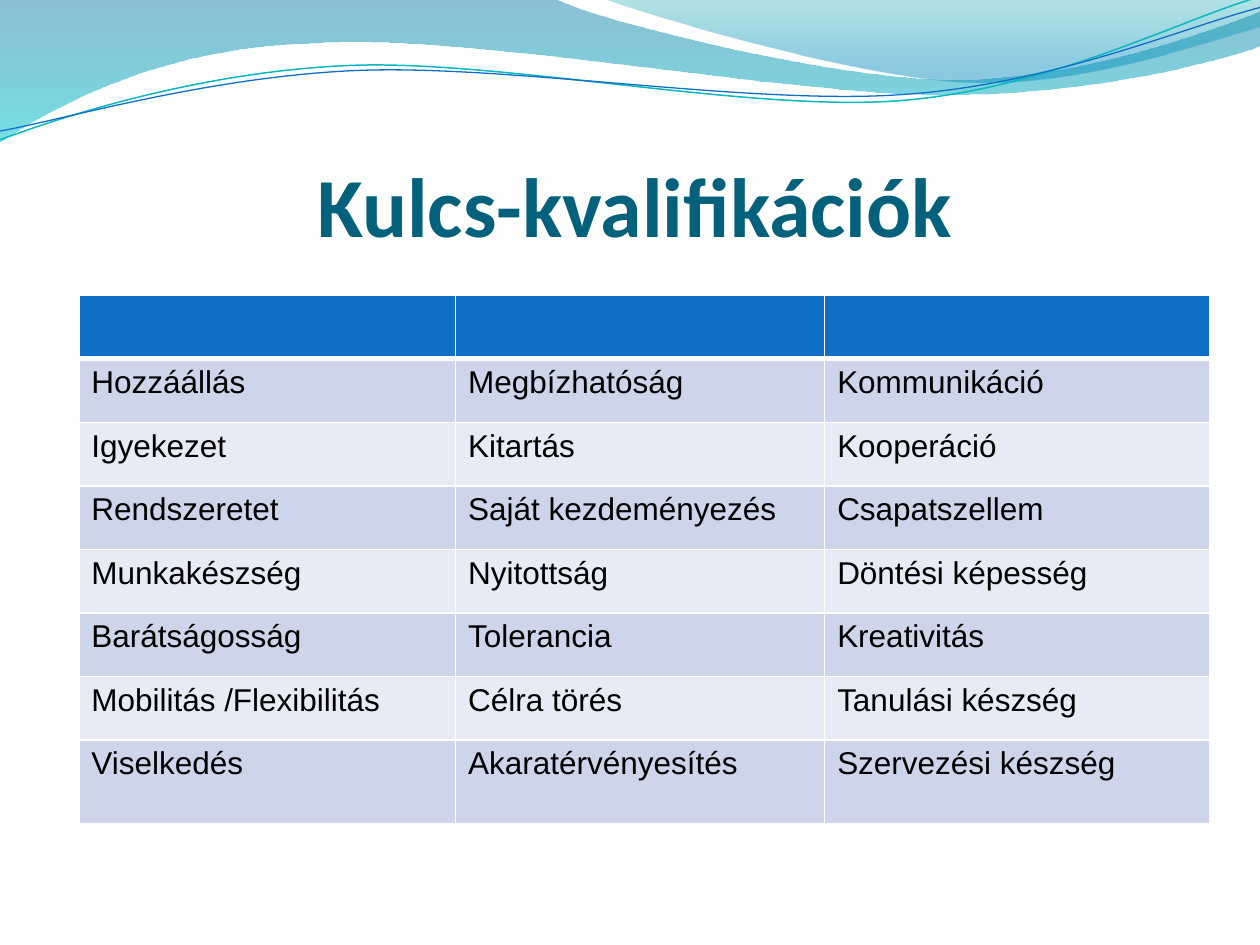
import math

import pptx
import pptx.util
import pptx.dml.color
import pptx.enum.text
import pptx.oxml
import pptx.oxml.ns
from lxml import etree

# Content
TITLE = "Kulcs-kvalifikációk"
ROWS = [
    ("", "", ""),
    ("Hozzáállás", "Megbízhatóság", "Kommunikáció"),
    ("Igyekezet", "Kitartás", "Kooperáció"),
    ("Rendszeretet", "Saját kezdeményezés", "Csapatszellem"),
    ("Munkakészség", "Nyitottság", "Döntési képesség"),
    ("Barátságosság", "Tolerancia", "Kreativitás"),
    ("Mobilitás /Flexibilitás", "Célra törés", "Tanulási készség"),
    ("Viselkedés", "Akaratérvényesítés", "Szervezési készség"),
]
COLORS = {
    "title": "04617B", "text": "000000", "border": "FFFFFF",
    "header": "0F6FC6", "odd": "CCD5EA", "even": "E7EBF5",
    "deep": "0074A1", "aqua": "00C6CF", "teal": "00A1A9",
    "sky": "008BBF", "line_teal": "0AB8BF", "line_blue": "0F6FC6",
}

# Wave outlines in inches: a pair is a straight step, six numbers a curve.
# Gradient stops: position, colour, opacity in percent.
BANDS = [
    ([(0, 0), (4.4, -0.01), (4.76, 0.17, 6.64, 0.63, 7.58, 0.63),
      (8.53, 0.63, 9.58, 0.26, 10, 0.09), (10.01, 0.36),
      (9.83, 0.44, 8.7, 0.76, 7.46, 0.75), (6.22, 0.75, 3.82, 0.28, 2.57, 0.34),
      (1.29, 0.36, 0.46, 0.83, -0.01, 1.13), (0, 0)],
     [(0, "deep", 45), (1, "aqua", 55)]),
    ([(4.79, -0.01), (5.09, 0.11, 6.82, 0.62, 7.69, 0.65),
      (8.56, 0.69, 9.61, 0.32, 10, 0.21), (10, 0), (4.79, -0.01)],
     [(0, "teal", 30), (0.8, "sky", 45)]),
]
# Lines: outline, centre of rotation, colour, width in points
LINES = [
    ([(0, 1.11), (0.48, 0.93, 1.58, 0.57, 2.77, 0.52),
      (3.95, 0.47, 5.93, 0.89, 7.13, 0.8), (8.33, 0.71, 9.38, 0.15, 9.98, -0.02)],
     (4.99, 0.57), "line_teal", 0.85),
    ([(0, 1.04), (0.47, 0.96, 1.64, 0.61, 2.83, 0.56),
      (4.03, 0.51, 5.97, 0.84, 7.17, 0.75), (8.36, 0.67, 9.41, 0.21, 10, 0.06)],
     (5, 0.59), "line_blue", 0.75),
]
LINE_TILT = 357.3

# Table grid
WIDTH, HEIGHT = 10, 7.5
LEFT, TOP = WIDTH / 16, HEIGHT * 5 / 16
COL_WIDTHS = (2.99, 2.93, 3.06)
ROW_HEIGHT = 3.53 / 7
LAST_HEIGHT = 0.67

inch = pptx.util.Inches
qn = pptx.oxml.ns.qn


def rgb(name):
    return pptx.dml.color.RGBColor.from_string(COLORS[name])


def write(tf, text, size, font, color, bold=False, align=None):
    p = tf.paragraphs[0]
    p.alignment = align
    r = p.add_run()
    r.text = text
    r.font.size = pptx.util.Pt(size)
    r.font.name = font
    r.font.bold = bold
    r.font.color.rgb = rgb(color)


def turn(step, centre, degrees):
    """Rotate every point of a step clockwise about the centre."""
    cos, sin = math.cos(math.radians(degrees)), math.sin(math.radians(degrees))
    turned = []
    for x, y in zip(step[::2], step[1::2]):
        dx, dy = x - centre[0], y - centre[1]
        turned += [centre[0] + dx * cos - dy * sin, centre[1] + dx * sin + dy * cos]
    return tuple(turned)


def add_wave(slide, steps, closed):
    """Build the outline through its end points, then bend the curved steps."""
    anchors = [(inch(step[-2]), inch(step[-1])) for step in steps]
    fb = slide.shapes.build_freeform(*anchors[0])
    fb.add_line_segments(anchors[1:], close=closed)
    sp = fb.convert_to_shape()
    sp.shadow.inherit = False
    segments = list(sp._element.iter(qn("a:lnTo")))
    for segment, step in zip(segments, steps[1:]):
        if len(step) == 6:
            curve = etree.Element(qn("a:cubicBezTo"))
            for x, y in zip(step[::2], step[1::2]):
                etree.SubElement(curve, qn("a:pt"), x=str(inch(x) - sp.left),
                                 y=str(inch(y) - sp.top))
            segment.getparent().replace(segment, curve)
    return sp


def add_borders(cell, bottom):
    tcPr = cell._tc.get_or_add_tcPr()
    for side, width in (("L", 1), ("R", 1), ("T", 1), ("B", bottom)):
        ln = etree.SubElement(tcPr, qn("a:ln" + side), w=str(pptx.util.Pt(width)))
        fill = etree.SubElement(ln, qn("a:solidFill"))
        etree.SubElement(fill, qn("a:srgbClr"), val=COLORS["border"])


prs = pptx.Presentation()
prs.slide_width, prs.slide_height = inch(WIDTH), inch(HEIGHT)
slide = prs.slides.add_slide(prs.slide_layouts[5])

# Waves at the top
for steps, stops in BANDS:
    sp = add_wave(slide, steps, closed=True)
    sp.line.fill.background()
    sp.fill.gradient()
    sp.fill.gradient_angle = 270
    elements = sp._element.iter(qn("a:gs"))
    for stop, gs, (pos, color, opacity) in zip(sp.fill.gradient_stops, elements, stops):
        stop.position = pos
        stop.color.rgb = rgb(color)
        etree.SubElement(gs[0], qn("a:alpha"), val=str(opacity * 1000))

for steps, centre, color, width in LINES:
    level = [turn(step, centre, -LINE_TILT) for step in steps]
    sp = add_wave(slide, level, closed=False)
    sp.rotation = LINE_TILT
    sp.fill.background()
    sp.line.color.rgb = rgb(color)
    sp.line.width = pptx.util.Pt(width)

# Title, in front of the waves
title = slide.shapes.title
slide.shapes._spTree.append(title._element)
title.left, title.top, title.width, title.height = map(inch, (0.5, 0.77, 9.08, 1.25))
tf = title.text_frame
tf.margin_left = tf.margin_right = tf.margin_bottom = 0
tf.margin_top = inch(0.05)
tf.vertical_anchor = pptx.enum.text.MSO_ANCHOR.BOTTOM
write(tf, TITLE, 48, "Calibri", "title", bold=True,
      align=pptx.enum.text.PP_ALIGN.CENTER)

# Table
heights = [ROW_HEIGHT] * (len(ROWS) - 1) + [LAST_HEIGHT]
table = slide.shapes.add_table(
    len(ROWS), len(COL_WIDTHS), inch(LEFT), inch(TOP),
    inch(sum(COL_WIDTHS)), inch(sum(heights))).table
for col, width in zip(table.columns, COL_WIDTHS):
    col.width = inch(width)
for i, (texts, height) in enumerate(zip(ROWS, heights)):
    table.rows[i].height = inch(height)
    color = "header" if i == 0 else ("even", "odd")[i % 2]
    for cell, text in zip(table.rows[i].cells, texts):
        add_borders(cell, bottom=3 if i == 0 else 1)
        cell.fill.solid()
        cell.fill.fore_color.rgb = rgb(color)
        if text:
            write(cell.text_frame, text, 18, "Arial", "text")

prs.save("out.pptx")
